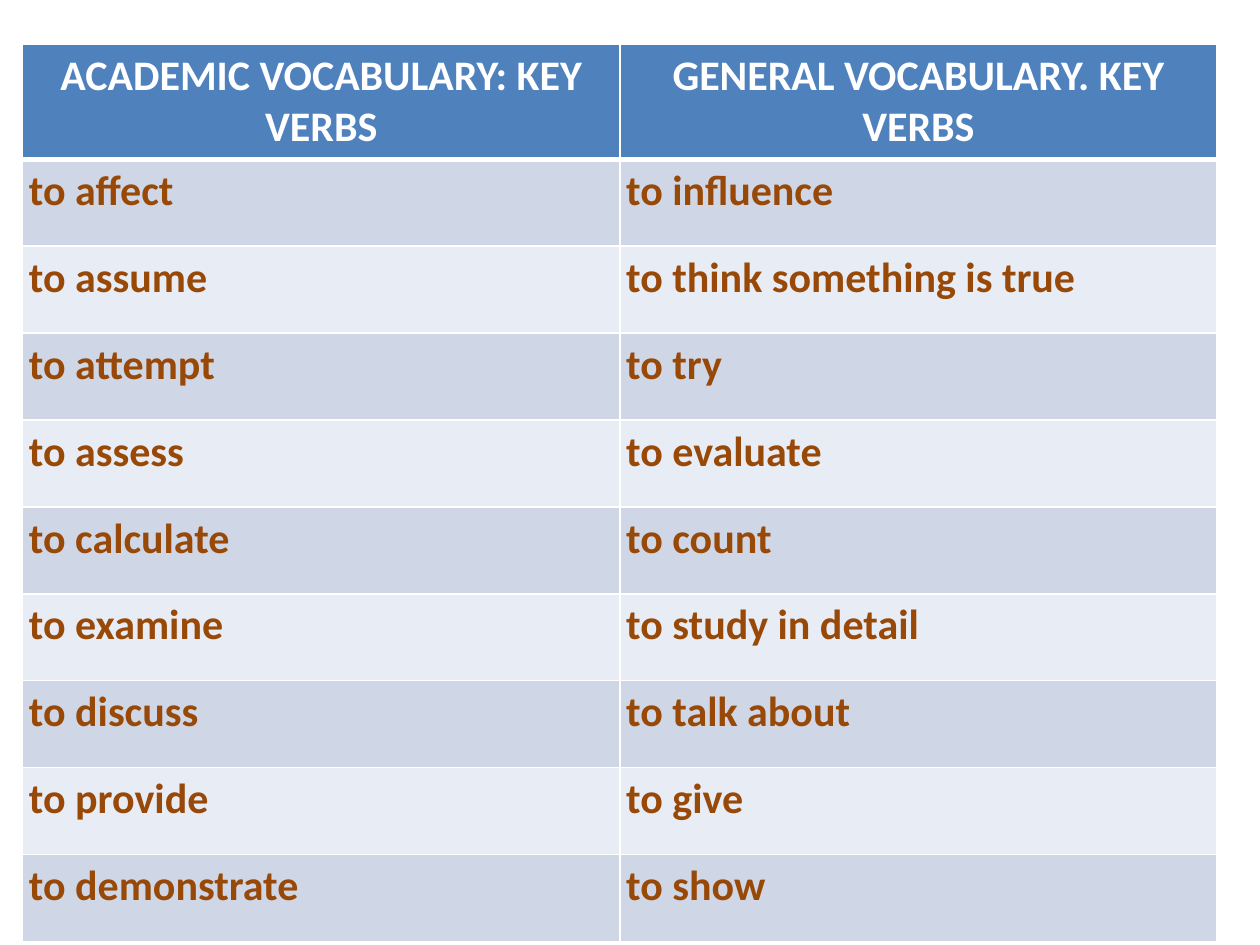
from lxml import etree
from pptx import Presentation
from pptx.dml.color import RGBColor
from pptx.enum.text import PP_ALIGN
from pptx.oxml.ns import qn
from pptx.util import Inches, Pt

CENTER, LEFT = PP_ALIGN.CENTER, PP_ALIGN.LEFT

HEADINGS = ("ACADEMIC VOCABULARY: KEY VERBS", "GENERAL VOCABULARY. KEY VERBS")
VERBS = [
    ("to affect", "to influence"),
    ("to assume", "to think something is true"),
    ("to attempt", "to try"),
    ("to assess", "to evaluate"),
    ("to calculate", "to count"),
    ("to examine", "to study in detail"),
    ("to discuss", "to talk about"),
    ("to provide", "to give"),
    ("to demonstrate", "to show"),
]

WHITE = RGBColor(0xFF, 0xFF, 0xFF)
BLUE = RGBColor(0x4F, 0x81, 0xBD)
BROWN = RGBColor(0x98, 0x48, 0x07)
BANDS = (RGBColor(0xCF, 0xD7, 0xE7), RGBColor(0xE8, 0xEC, 0xF4))

FONT = "Calibri"
TEXT_SIZE = 24
CELL_MARGIN = Inches(0.05)
TABLE_LEFT, TABLE_TOP = 0.18, 0.35
COLUMN_WIDTH, ROW_HEIGHT = 4.74, 0.69
THIN, THICK = 1, 3


def write_text(cell, text, color, align=LEFT):
    cell.margin_left = cell.margin_right = CELL_MARGIN
    cell.margin_top = cell.margin_bottom = CELL_MARGIN
    paragraph = cell.text_frame.paragraphs[0]
    paragraph.alignment = align
    run = paragraph.add_run()
    run.text = text
    run.font.name = FONT
    run.font.size = Pt(TEXT_SIZE)
    run.font.bold = True
    run.font.color.rgb = color


def set_borders(cell, **widths):
    """Draw white cell edges; widths maps L, R, T and B to points."""
    properties = cell._tc.get_or_add_tcPr()
    for side, width in widths.items():
        line = etree.SubElement(properties, qn(f"a:ln{side}"), w=str(Pt(width)))
        fill = etree.SubElement(line, qn("a:solidFill"))
        etree.SubElement(fill, qn("a:srgbClr"), val=str(WHITE))


def fill_cell(cell, color):
    cell.fill.solid()
    cell.fill.fore_color.rgb = color


def add_vocabulary_table(slide):
    rows = [HEADINGS, *VERBS]
    columns = len(HEADINGS)
    table = slide.shapes.add_table(
        len(rows), columns, Inches(TABLE_LEFT), Inches(TABLE_TOP),
        Inches(COLUMN_WIDTH * columns), Inches(ROW_HEIGHT * len(rows)),
    ).table
    table.horz_banding = False
    for column in table.columns:
        column.width = Inches(COLUMN_WIDTH)

    for row_index, texts in enumerate(rows):
        table.rows[row_index].height = Inches(ROW_HEIGHT)
        is_header = row_index == 0
        for column_index, text in enumerate(texts):
            cell = table.cell(row_index, column_index)
            write_text(cell, text, color=WHITE if is_header else BROWN,
                       align=CENTER if is_header else LEFT)
            # Edges come before the fill in the cell's properties.
            set_borders(cell, L=THIN, R=THIN,
                        T=THICK if row_index == 1 else THIN,
                        B=THICK if is_header else THIN)
            fill_cell(cell, BLUE if is_header else BANDS[(row_index - 1) % 2])


def main():
    presentation = Presentation()
    presentation.slide_width = Inches(10)
    presentation.slide_height = Inches(7.5)
    slide = presentation.slides.add_slide(presentation.slide_layouts[6])
    add_vocabulary_table(slide)
    presentation.save("out.pptx")


if __name__ == "__main__":
    main()
